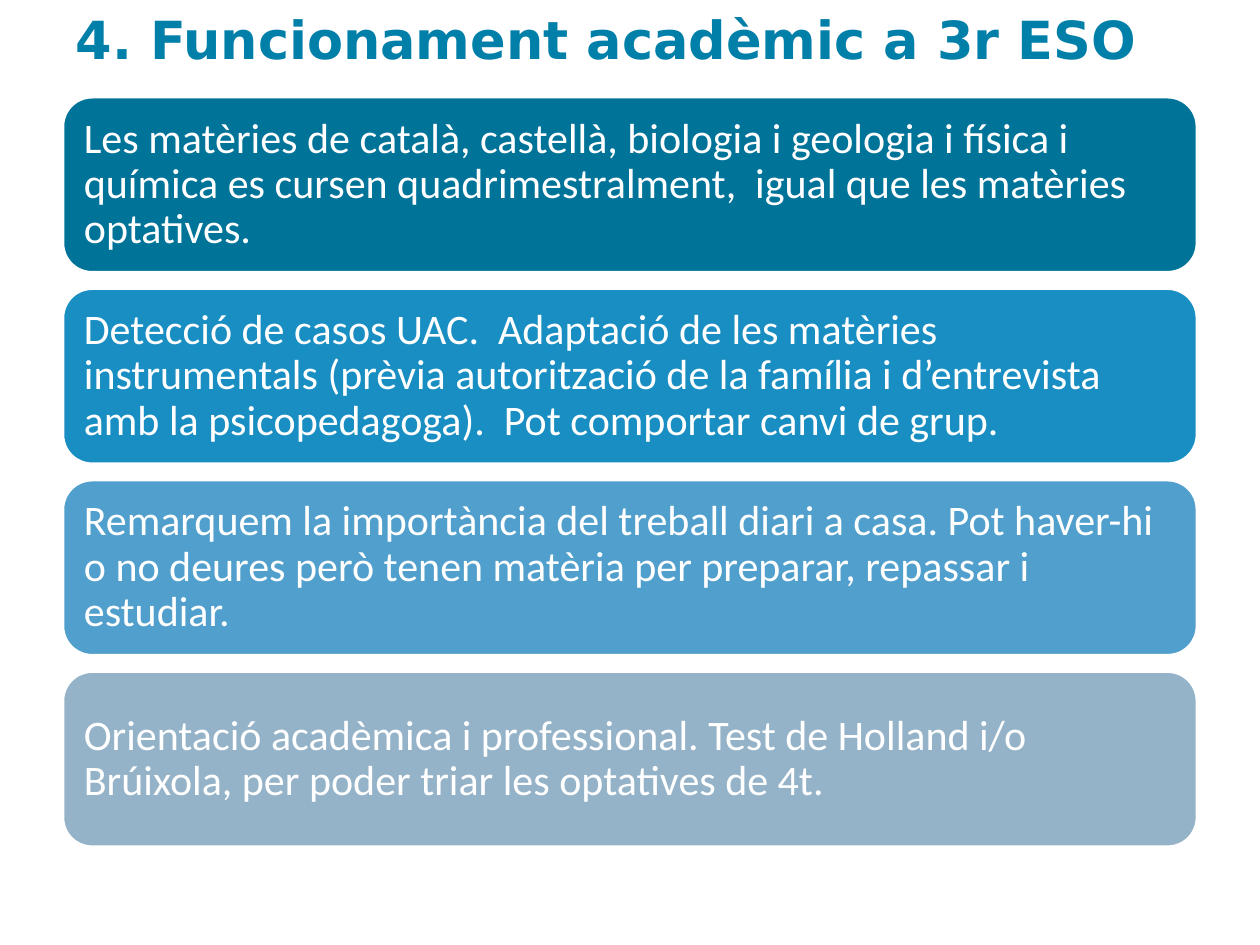
from pptx import Presentation
from pptx.dml.color import RGBColor
from pptx.enum.shapes import MSO_SHAPE
from pptx.enum.text import MSO_ANCHOR, PP_ALIGN
from pptx.util import Cm, Pt

COLORS = {
    "title": "007FA9",
    "text": "FFFFFF",
    "subjects": "007399",
    "support": "198EC2",
    "homework": "519FCC",
    "guidance": "95B3C8",
}

TITLE_FONT = {"name": "DejaVu Sans", "size": Pt(30), "bold": True}
CARD_FONT = {"name": "Calibri", "size": Pt(24)}
CARD_MARGINS = {f"margin_{side}": Cm(0.25) for side in ("left", "top", "right", "bottom")}

CARDS = [
    ("subjects", "Les matèries de català, castellà, biologia i geologia i física i química "
                 "es cursen quadrimestralment,  igual que les matèries optatives."),
    ("support", "Detecció de casos UAC.  Adaptació de les matèries instrumentals (prèvia "
                "autorització de la família i d’entrevista amb la psicopedagoga).  "
                "Pot comportar canvi de grup."),
    ("homework", "Remarquem la importància del treball diari a casa. Pot haver-hi o no "
                 "deures però tenen matèria per preparar, repassar i estudiar."),
    ("guidance", "Orientació acadèmica i professional. Test de Holland i/o Brúixola, "
                 "per poder triar les optatives de 4t."),
]

LEFT, WIDTH = 1.27, 22.86
CARD_TOP, CARD_HEIGHT, CARD_GAP = 1.96, 3.53, 0.33


def apply(target, values):
    for name, value in values.items():
        setattr(target, name, value)


class SlideBuilder:
    def __init__(self, slide, colors):
        self.s = slide
        self.colors = colors

    def color(self, key):
        return RGBColor.from_string(self.colors[key])

    def add_text(self, tf, text, font, color, anchor):
        apply(tf, {"word_wrap": True, "vertical_anchor": anchor})
        p = tf.paragraphs[0]
        p.alignment = PP_ALIGN.LEFT
        r = p.add_run()
        r.text = text
        apply(r.font, font)
        r.font.color.rgb = self.color(color)
        return p

    def title(self, text):
        sp = self.s.shapes.title
        apply(sp, {"left": Cm(LEFT), "top": Cm(0.23), "width": Cm(WIDTH), "height": Cm(1.3)})
        self.add_text(sp.text_frame, text, TITLE_FONT, "title", MSO_ANCHOR.BOTTOM)

    def card(self, top, fill, text):
        sp = self.s.shapes.add_shape(
            MSO_SHAPE.ROUNDED_RECTANGLE, Cm(LEFT), Cm(top), Cm(WIDTH), Cm(CARD_HEIGHT))
        sp.shadow.inherit = False
        sp.fill.solid()
        sp.fill.fore_color.rgb = self.color(fill)
        sp.line.color.rgb = self.color("text")
        sp.line.width = Pt(1.5)
        apply(sp.text_frame, CARD_MARGINS)
        p = self.add_text(sp.text_frame, text, CARD_FONT, "text", MSO_ANCHOR.MIDDLE)
        p.line_spacing = 0.9


def main():
    prs = Presentation()
    prs.slide_width, prs.slide_height = Cm(25.4), Cm(19.05)
    builder = SlideBuilder(prs.slides.add_slide(prs.slide_layouts[5]), COLORS)
    builder.title("4. Funcionament acadèmic a 3r ESO")
    for i, (fill, text) in enumerate(CARDS):
        builder.card(CARD_TOP + i * (CARD_HEIGHT + CARD_GAP), fill, text)
    prs.save("out.pptx")


if __name__ == "__main__":
    main()
